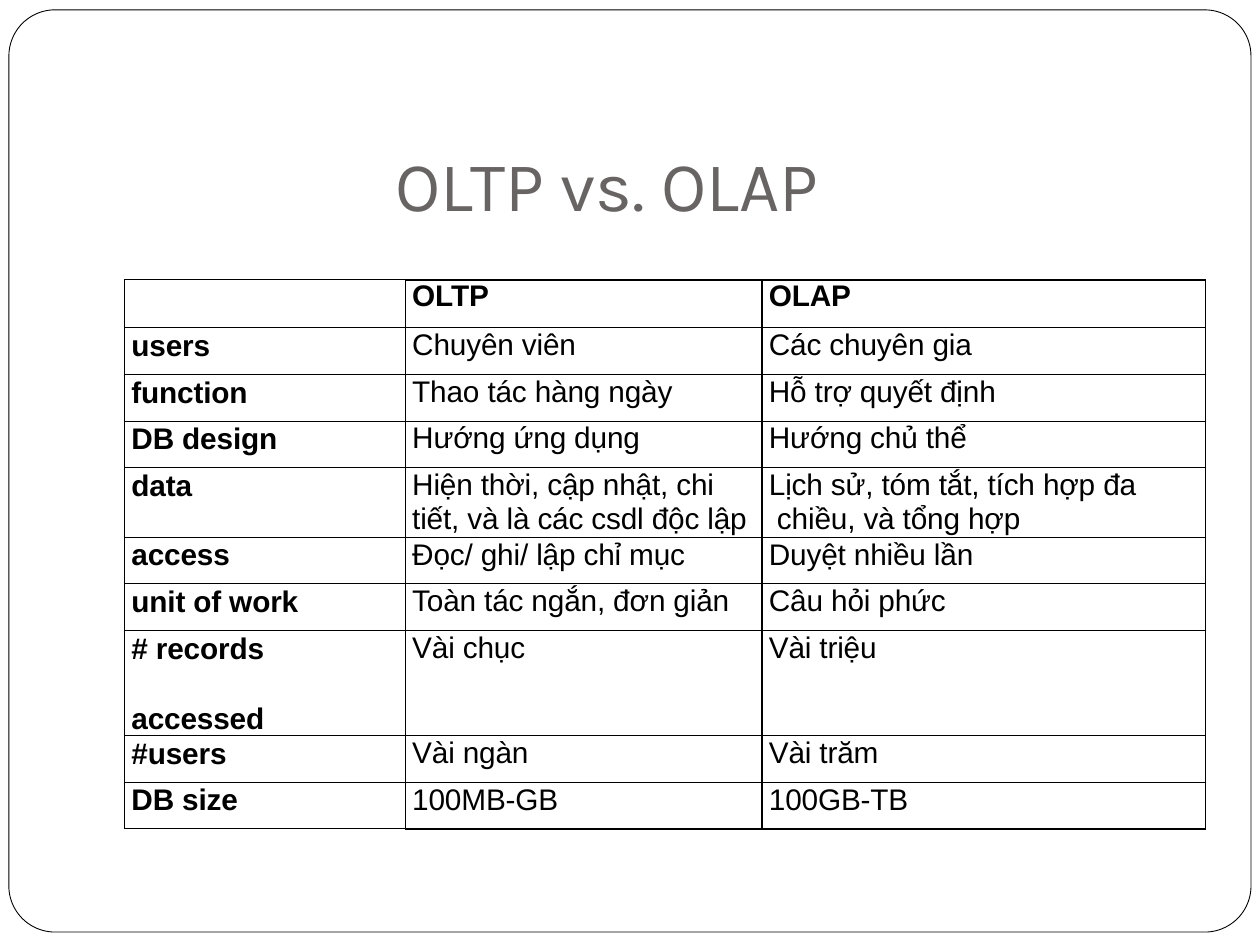
"""Build a slide with a table that compares OLTP and OLAP."""
from lxml import etree
from pptx import Presentation
from pptx.dml.color import RGBColor
from pptx.enum.shapes import MSO_SHAPE
from pptx.enum.text import MSO_ANCHOR, MSO_AUTO_SIZE
from pptx.oxml.ns import qn
from pptx.util import Cm, Pt

ROUNDED = MSO_SHAPE.ROUNDED_RECTANGLE
BOTTOM = MSO_ANCHOR.BOTTOM
GROW = MSO_AUTO_SIZE.SHAPE_TO_FIT_TEXT
BLACK, WHITE, GREY = "000000", "FFFFFF", "696464"

ROWS = [
    ("", "OLTP", "OLAP"),
    ("users", "Chuyên viên", "Các chuyên gia"),
    ("function", "Thao tác hàng ngày", "Hỗ trợ quyết định"),
    ("DB design", "Hướng ứng dụng", "Hướng chủ thể"),
    ("data", "Hiện thời, cập nhật, chi\vtiết, và là các csdl độc lập",
     "Lịch sử, tóm tắt, tích hợp đa\v chiều, và tổng hợp"),
    ("access", "Đọc/ ghi/ lập chỉ mục", "Duyệt nhiều lần"),
    ("unit of work", "Toàn tác ngắn, đơn giản", "Câu hỏi phức"),
    ("# records\naccessed", "Vài chục", "Vài triệu"),
    ("#users", "Vài ngàn", "Vài trăm"),
    ("DB size", "100MB-GB", "100GB-TB"),
]
COLUMN_WIDTHS = [5.66, 7.19, 8.94]
ROW_HEIGHTS = [0.97, 0.94, 0.94, 0.94, 1.4, 0.94, 0.94, 1.42, 0.94, 0.94]
LEFT_BORDERS = [0.75, 0.5, 0.75]
RIGHT_BORDERS = [0.5, 0.75, 0.75]
TOP_BORDERS = [0.5, 1.5, 1]
BOTTOM_BORDERS = [0.75, 1.5, 1.5]


def color(value):
    return RGBColor.from_string(value)


def add_border(cell, side, points):
    properties = cell._tc.get_or_add_tcPr()
    line = etree.SubElement(properties, qn(f"a:ln{side}"), w=str(Pt(points)))
    fill = etree.SubElement(line, qn("a:solidFill"))
    etree.SubElement(fill, qn("a:srgbClr"), val=BLACK)


presentation = Presentation()
presentation.slide_width = Cm(25.4)
presentation.slide_height = Cm(19.05)
slide = presentation.slides.add_slide(presentation.slide_layouts[6])

frame = slide.shapes.add_shape(ROUNDED, Cm(0.18), Cm(0.2), Cm(25.04), Cm(18.59))
frame.adjustments[0] = 0.05
frame.shadow.inherit = False
frame.fill.solid()
frame.fill.fore_color.rgb = color(WHITE)
frame.line.color.rgb = color(BLACK)
frame.line.width = Pt(0.5)

title = slide.shapes.add_textbox(Cm(7.98), Cm(2.95), Cm(9.45), Cm(1.6))
text_frame = title.text_frame
text_frame.word_wrap = True
text_frame.auto_size = GROW
text_frame.vertical_anchor = BOTTOM
text_frame.margin_left = text_frame.margin_right = text_frame.margin_bottom = 0
text_frame.margin_top = Cm(0.03)
paragraph = text_frame.paragraphs[0]
paragraph.text = "OLTP vs. OLAP"
paragraph.space_before = Pt(1)
paragraph.font.name = "Karla"
paragraph.font.size = Pt(40)
paragraph.font.color.rgb = color(GREY)

table = slide.shapes.add_table(
    len(ROWS), len(COLUMN_WIDTHS), Cm(2.51), Cm(5.64),
    Cm(sum(COLUMN_WIDTHS)), Cm(sum(ROW_HEIGHTS))).table
table.first_row = False
table.horz_banding = False
for column, width in zip(table.columns, COLUMN_WIDTHS):
    column.width = Cm(width)
for row, height in zip(table.rows, ROW_HEIGHTS):
    row.height = Cm(height)

for row_index, texts in enumerate(ROWS):
    is_header = row_index == 0
    is_last = row_index == len(ROWS) - 1
    for column_index, text in enumerate(texts):
        cell = table.cell(row_index, column_index)
        cell.margin_left = Cm(0.14)
        cell.margin_right = cell.margin_top = cell.margin_bottom = 0
        add_border(cell, "L", LEFT_BORDERS[column_index])
        add_border(cell, "R", RIGHT_BORDERS[column_index])
        add_border(cell, "T", TOP_BORDERS[column_index] if is_header else 0.75)
        add_border(cell, "B", BOTTOM_BORDERS[column_index] if is_last else 0.75)
        cell.fill.background()
        cell.text = text
        for line_index, paragraph in enumerate(cell.text_frame.paragraphs):
            paragraph.font.name = "Arial"
            paragraph.font.size = Pt(17)
            paragraph.font.bold = is_header or column_index == 0
            paragraph.font.color.rgb = color(BLACK)
            if not is_header:
                paragraph.line_spacing = Pt(20 if column_index == 0 else 19.5)
            if line_index:
                paragraph.space_before = Pt(20)
            for run in paragraph.runs:
                run._r.get_or_add_rPr().set("spc", "-10")

presentation.save("out.pptx")
